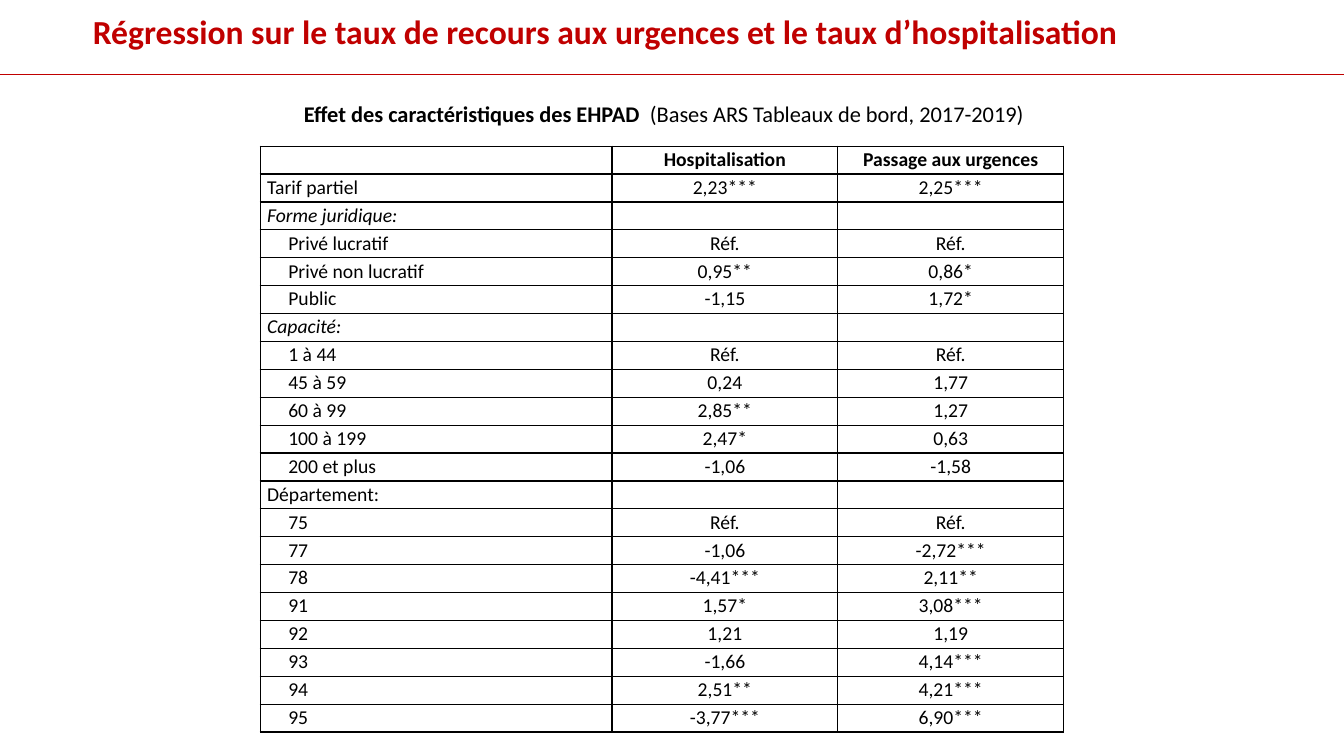
from lxml.etree import SubElement
from pptx import Presentation
from pptx.dml.color import RGBColor
from pptx.enum.text import MSO_ANCHOR as Anchor, MSO_AUTO_SIZE as AutoSize, PP_ALIGN as Align
from pptx.oxml.ns import qn
from pptx.util import Inches, Pt

# Content
TITLE = "Régression sur le taux de recours aux urgences et le taux d’hospitalisation"
CAPTION = [("Effet des caractéristiques des EHPAD  ", True),
           ("(Bases ARS Tableaux de bord, 2017-2019)", False)]
HEADER = ("", "Hospitalisation", "Passage aux urgences")
# Group heading, heading in italics, rows of the group
GROUPS = [
    (("Tarif partiel", "2,23***", "2,25***"), False, []),
    (("Forme juridique:", "", ""), True, [
        ("Privé lucratif", "Réf.", "Réf."),
        ("Privé non lucratif", "0,95**", "0,86*"),
        ("Public", "-1,15", "1,72*"),
    ]),
    (("Capacité:", "", ""), True, [
        ("1 à 44", "Réf.", "Réf."),
        ("45 à 59", "0,24", "1,77"),
        ("60 à 99", "2,85**", "1,27"),
        ("100 à 199", "2,47*", "0,63"),
        ("200 et plus", "-1,06", "-1,58"),
    ]),
    (("Département:", "", ""), False, [
        ("75", "Réf.", "Réf."),
        ("77", "-1,06", "-2,72***"),
        ("78", "-4,41***", "2,11**"),
        ("91", "1,57*", "3,08***"),
        ("92", "1,21", "1,19"),
        ("93", "-1,66", "4,14***"),
        ("94", "2,51**", "4,21***"),
        ("95", "-3,77***", "6,90***"),
    ]),
]
COLORS = {"red": "C00000", "black": "000000"}
FONT = "Calibri"
COLUMN_WIDTHS = (3.49, 2.24, 2.24)
TABLE_LEFT, TABLE_TOP, TABLE_HEIGHT = 2.58, 1.45, 5.82
CELL_SIZE = 14


def place(shape, left, top, width, height):
    shape.left, shape.top = Inches(left), Inches(top)
    shape.width, shape.height = Inches(width), Inches(height)


def set_font(font, size, color, bold=False, italic=False):
    font.name, font.size, font.bold, font.italic = FONT, Pt(size), bold, italic
    font.color.rgb = RGBColor.from_string(COLORS[color])


def set_borders(cell):
    properties = cell._tc.get_or_add_tcPr()
    for side in ("a:lnL", "a:lnR", "a:lnT", "a:lnB"):
        line = SubElement(properties, qn(side), w=str(Pt(1)))
        fill = SubElement(line, qn("a:solidFill"))
        SubElement(fill, qn("a:srgbClr"), val=COLORS["black"])


def fill_cell(cell, text, align, bold, italic, indent):
    cell.margin_left = cell.margin_right = Inches(0.07)
    cell.margin_top = cell.margin_bottom = 0
    set_borders(cell)
    cell.fill.background()
    paragraph = cell.text_frame.paragraphs[0]
    paragraph.alignment = align
    paragraph.line_spacing = 1.07
    set_font(paragraph.font, CELL_SIZE, "black", bold, italic)
    if indent:
        paragraph._p.get_or_add_pPr().set("indent", str(Inches(0.21)))
    if text:
        paragraph.add_run().text = text
    else:
        SubElement(paragraph._p, qn("a:endParaRPr"), sz=str(CELL_SIZE * 100))


presentation = Presentation()
presentation.slide_width, presentation.slide_height = Inches(13.33), Inches(7.5)
slide = presentation.slides.add_slide(presentation.slide_layouts[1])

# Title with its red rule
title = slide.shapes.title
place(title, -0.18, -0.08, 13.71, 0.82)
title.line.color.rgb = RGBColor.from_string(COLORS["red"])
title.line.width = Pt(1.25)
frame = title.text_frame
frame.text = TITLE
frame.auto_size = AutoSize.NONE
frame.vertical_anchor = Anchor.MIDDLE
frame.margin_left = Inches(1.1)
paragraph = frame.paragraphs[0]
paragraph.alignment = Align.LEFT
paragraph.line_spacing = 0.9
set_font(paragraph.font, 24, "red", bold=True)

# Caption above the table
body = slide.placeholders[1]
place(body, 0.33, 0.97, 12.51, 6.07)
body.text_frame.auto_size = AutoSize.NONE
paragraph = body.text_frame.paragraphs[0]
paragraph.alignment = Align.CENTER
paragraph.line_spacing = 0.9
paragraph.space_before = Pt(10)
properties = paragraph._p.get_or_add_pPr()
properties.set("marL", "0")
properties.set("indent", "0")
SubElement(properties, qn("a:buNone"))
for text, bold in CAPTION:
    run = paragraph.add_run()
    run.text = text
    set_font(run.font, 16, "black", bold)

# Table rows: cells, bold, italic label, indented label
rows = [(HEADER, True, False, False)]
for heading, italic, members in GROUPS:
    rows.append((heading, False, italic, False))
    rows += [(member, False, False, True) for member in members]

# Regression table
table = slide.shapes.add_table(
    len(rows), len(HEADER), Inches(TABLE_LEFT), Inches(TABLE_TOP),
    Inches(sum(COLUMN_WIDTHS)), Inches(TABLE_HEIGHT)).table
table.first_row = table.horz_banding = False
for column, width in zip(table.columns, COLUMN_WIDTHS):
    column.width = Inches(width)
for row_index, (texts, bold, italic, indent) in enumerate(rows):
    table.rows[row_index].height = Inches(TABLE_HEIGHT / len(rows))
    for column_index, text in enumerate(texts):
        is_label = column_index == 0
        fill_cell(table.cell(row_index, column_index), text,
                  Align.LEFT if is_label else Align.CENTER,
                  bold, italic and is_label, indent and is_label)

presentation.save("out.pptx")
